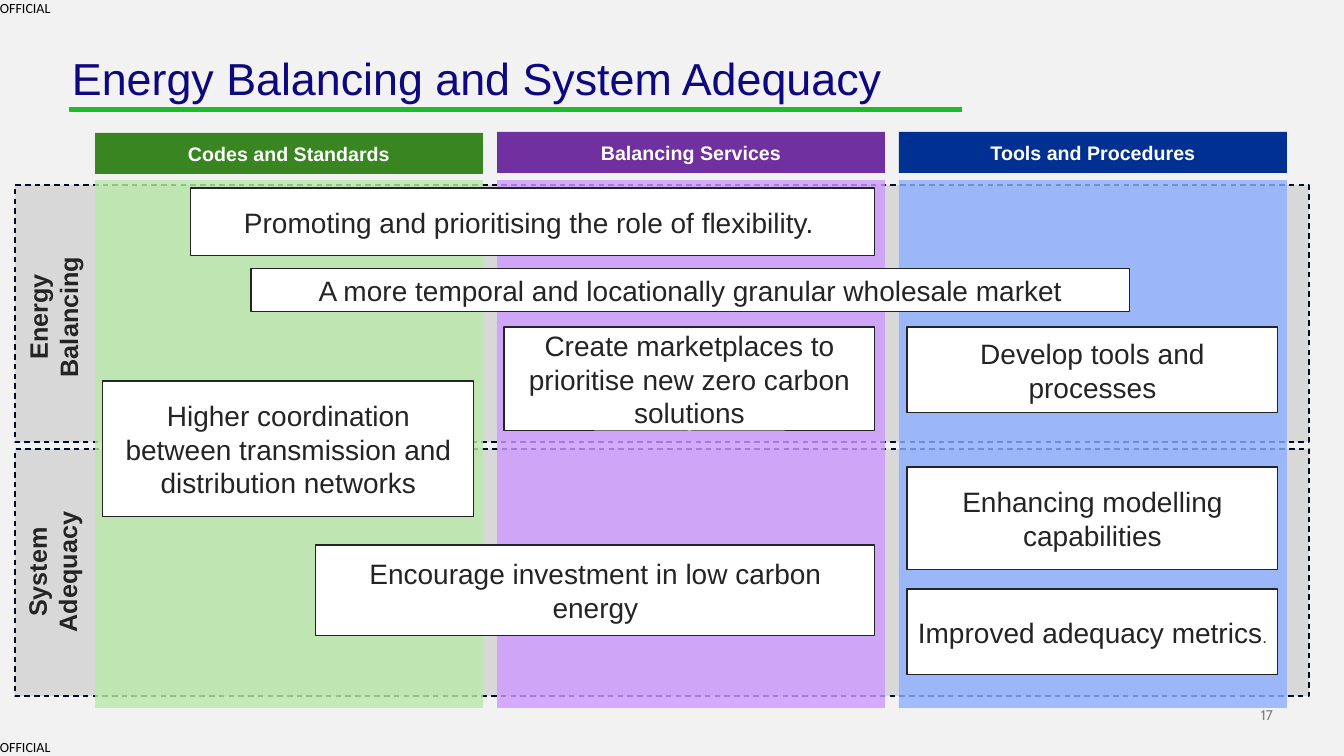
import pptx
import pptx.util
import pptx.dml.color
import pptx.enum.shapes
import pptx.enum.text
import pptx.enum.dml
import pptx.oxml.ns
import lxml.etree

PX = 914400 / 100.8
RECT = pptx.enum.shapes.MSO_SHAPE.RECTANGLE
ALIGN = pptx.enum.text.PP_ALIGN
ANCHOR = pptx.enum.text.MSO_ANCHOR

theme = {
    "font": "Arial", "mark font": "Calibri", "page font": "Cabin",
    "back": "F2F2F2", "title": "0D0780", "rule": "1CBC2B",
    "band": "D8D8D8", "dash": "000D27", "ink": "242424",
    "white": "FFFFFF", "black": "000000", "grey": "7F7F7F",
    "title size": 32, "card size": 20, "row size": 18,
    "head size": 14, "dot size": 12, "small size": 10,
}


def color(code):
    return pptx.dml.color.RGBColor.from_string(code)


def add_box(area, text="", size=0, ink="black", font="font", bold=False,
            fill=None, line=None, width=0.75, align=ALIGN.CENTER,
            anchor=ANCHOR.MIDDLE, inset=True):
    area = [round(n * PX) for n in area]
    if fill:
        box = slide.shapes.add_shape(RECT, *area)
        box.shadow.inherit = False
        box.fill.solid()
        box.fill.fore_color.rgb = color(fill)
        if line:
            box.line.color.rgb = color(line)
            box.line.width = pptx.util.Pt(width)
        else:
            box.line.fill.background()
    else:
        box = slide.shapes.add_textbox(*area)
    if text:
        frame = box.text_frame
        frame.text = text
        frame.word_wrap = inset
        frame.vertical_anchor = anchor
        if not inset:
            frame.margin_left = frame.margin_right = 0
            frame.margin_top = frame.margin_bottom = 0
        frame.paragraphs[0].alignment = align
        run = frame.paragraphs[0].runs[0]
        run.font.size = pptx.util.Pt(theme[size])
        run.font.name = theme[font]
        run.font.bold = bold
        run.font.color.rgb = color(theme[ink])
    return box


deck = pptx.Presentation()
deck.slide_width = round(1344 * PX)
deck.slide_height = round(756 * PX)
slide = deck.slides.add_slide(deck.slide_layouts[6])
slide.background.fill.solid()
slide.background.fill.fore_color.rgb = color(theme["back"])

# Page number and page marks
add_box((1231, 706, 42, 17), "17", "small size", "grey", "page font",
        align=ALIGN.RIGHT, anchor=ANCHOR.BOTTOM, inset=False)
for top in (739, 0):
    add_box((0, top, 53, 17), "OFFICIAL", "small size", "black", "mark font",
            align=ALIGN.LEFT, anchor=ANCHOR.TOP, inset=False)

# Title and its rule
add_box((70, 108, 892, 4), fill=theme["rule"], line=theme["rule"])
title = add_box((72, 57, 893, 48), "Energy Balancing and System Adequacy",
                "title size", "title", align=ALIGN.LEFT, anchor=ANCHOR.TOP,
                inset=False)
title.text_frame.paragraphs[0].line_spacing = 0.9

# Dashed rows with labels turned upright
rows = [
    ("System Adequacy", 449, 247, (-53, 535, 210, 74)),
    ("Energy Balancing", 185, 257, (-60, 280, 226, 74)),
]
for name, top, high, area in rows:
    band = add_box((15, top, 1294, high), fill=theme["band"],
                   line=theme["dash"], width=1)
    band.line.dash_style = pptx.enum.dml.MSO_LINE.DASH
    label = add_box(area, name, "row size", "ink", bold=True)
    label.rotation = 270

# Columns: solid head over a see-through panel
cols = [
    ("Codes and Standards", 133, "398521", "B9E9AA"),
    ("Balancing Services", 132, "7030A0", "CC99FF"),
    ("Tools and Procedures", 132, "003192", "8CAFFF"),
]
for i, (name, top, dark, light) in enumerate(cols):
    left = 95 + 402 * i
    add_box((left, top, 388, 41), name, "head size", "white", bold=True,
            fill=dark)
    panel = add_box((left, 180, 388, 528), fill=light)
    tint = panel.fill._xPr.find(".//" + pptx.oxml.ns.qn("a:srgbClr"))
    alpha = lxml.etree.SubElement(tint, pptx.oxml.ns.qn("a:alpha"))
    alpha.set("val", "80000")

# White cards
cards = [
    ("Create marketplaces to prioritise new zero carbon solutions",
     504, 327, 371, 104),
    ("A more temporal and locationally granular wholesale market",
     251, 269, 879, 43),
    ("Promoting and prioritising the role of flexibility. ",
     191, 188, 684, 68),
    ("Develop tools and processes", 907, 327, 371, 86),
    ("Higher coordination between transmission and distribution networks",
     103, 381, 371, 136),
    ("Encourage investment in low carbon energy", 316, 545, 559, 91),
    ("Enhancing modelling capabilities", 907, 467, 371, 103),
    ("Improved adequacy metrics", 907, 589, 371, 86),
]
for text, *area in cards:
    card = add_box(area, text, "card size", "ink", fill=theme["white"],
                   line=theme["ink"])

# Small full stop on the last card
dot = card.text_frame.paragraphs[0].add_run()
dot.text = "."
dot.font.size = pptx.util.Pt(theme["dot size"])
dot.font.name = theme["font"]
dot.font.color.rgb = color(theme["ink"])

deck.save("out.pptx")
